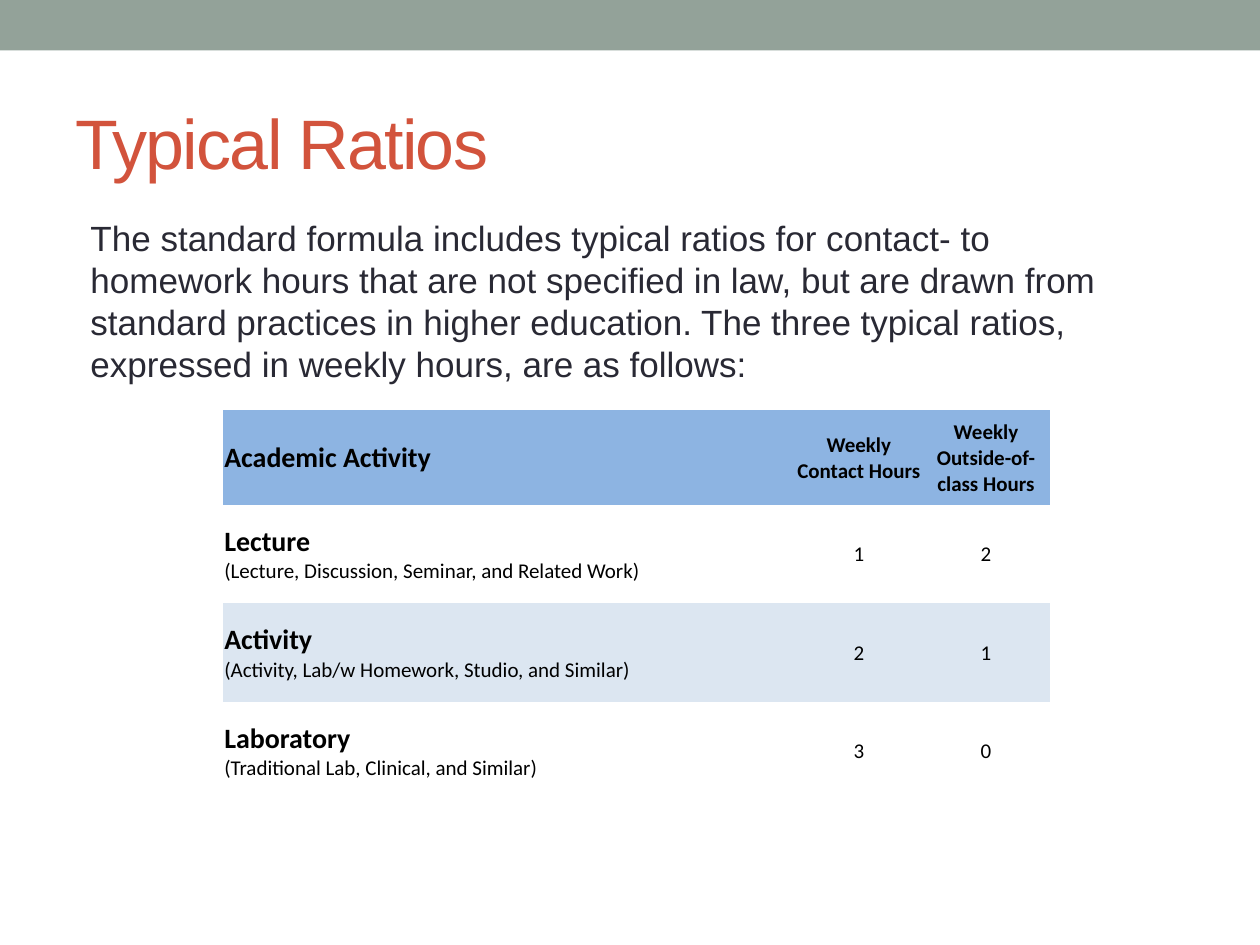
from dataclasses import dataclass

from pptx import Presentation
from pptx.dml.color import RGBColor
from pptx.enum.shapes import MSO_SHAPE
from pptx.enum.text import MSO_ANCHOR, PP_ALIGN
from pptx.util import Pt

RECTANGLE = MSO_SHAPE.RECTANGLE
TOP, MIDDLE = MSO_ANCHOR.TOP, MSO_ANCHOR.MIDDLE
LEFT, CENTER = PP_ALIGN.LEFT, PP_ALIGN.CENTER
NO_STYLE_NO_GRID = "{2D5ABB26-0587-4C30-8999-92F81FD0307C}"
BLANK_LAYOUT = 6


@dataclass(frozen=True)
class Theme:
    band: str = "93A299"
    title: str = "D2533C"
    body: str = "292934"
    table_text: str = "000000"
    header_fill: str = "8DB4E2"
    stripe_fill: str = "DCE6F1"
    text_font: str = "Arial"
    table_font: str = "Calibri"
    title_size: float = 40
    body_size: float = 20
    activity_size: float = 16
    detail_size: float = 12


THEME = Theme()

INTRO = (
    "The standard formula includes typical ratios for contact- to homework hours "
    "that are not specified in law, but are drawn from standard practices in higher "
    "education. The three typical ratios, expressed in weekly hours, are as follows:"
)
HEADINGS = ("Academic Activity", "Weekly Contact Hours", "Weekly Outside-of-class Hours")
RATIOS = (
    ("Lecture", "(Lecture, Discussion, Seminar, and Related Work)", 1, 2),
    ("Activity", "(Activity, Lab/w Homework, Studio, and Similar)", 2, 1),
    ("Laboratory", "(Traditional Lab, Clinical, and Similar)", 3, 0),
)
COLUMN_WIDTHS = (327, 72.7, 72.7)
HEADER_HEIGHT, RATIO_HEIGHT = 54, 56.2


def write(paragraph, text, *, size, font=THEME.table_font, color=THEME.table_text,
          bold=False, align=LEFT, tracking=None, line_spacing=None):
    """Append a formatted run to the paragraph."""
    paragraph.alignment = align
    if line_spacing:
        paragraph.line_spacing = Pt(line_spacing)
    run = paragraph.add_run()
    run.text = text
    run.font.name = font
    run.font.size = Pt(size)
    run.font.bold = bold
    run.font.color.rgb = RGBColor.from_string(color)
    if tracking:
        run.font._element.set("spc", str(int(tracking * 100)))


def add_band(slide, width, height):
    band = slide.shapes.add_shape(RECTANGLE, 0, 0, width, Pt(height))
    band.shadow.inherit = False
    band.fill.solid()
    band.fill.fore_color.rgb = RGBColor.from_string(THEME.band)
    band.line.fill.background()


def add_text(slide, text, left, top, width, height, anchor=TOP, **text_format):
    frame = slide.shapes.add_textbox(Pt(left), Pt(top), Pt(width), Pt(height)).text_frame
    frame.word_wrap = True
    frame.vertical_anchor = anchor
    write(frame.paragraphs[0], text, font=THEME.text_font, **text_format)


def prepare_cell(cell, fill):
    """Set the cell's fill and margins, and return its paragraph."""
    cell.vertical_anchor = MIDDLE
    cell.margin_left = cell.margin_right = cell.margin_top = Pt(0.75)
    cell.margin_bottom = 0
    if fill:
        cell.fill.solid()
        cell.fill.fore_color.rgb = RGBColor.from_string(fill)
    else:
        cell.fill.background()
    return cell.text_frame.paragraphs[0]


def add_ratio_table(slide, left, top):
    height = HEADER_HEIGHT + RATIO_HEIGHT * len(RATIOS)
    table = slide.shapes.add_table(
        len(RATIOS) + 1, len(HEADINGS),
        Pt(left), Pt(top), Pt(sum(COLUMN_WIDTHS)), Pt(height)).table
    table._tbl.tblPr[0].text = NO_STYLE_NO_GRID
    table.first_row = table.horz_banding = False
    for column, width in zip(table.columns, COLUMN_WIDTHS):
        column.width = Pt(width)
    for index, row in enumerate(table.rows):
        row.height = Pt(RATIO_HEIGHT if index else HEADER_HEIGHT)

    # Header row
    for index, heading in enumerate(HEADINGS):
        write(prepare_cell(table.cell(0, index), THEME.header_fill), heading, bold=True,
              size=THEME.detail_size if index else THEME.activity_size,
              align=CENTER if index else LEFT)

    # One row per activity, every second one striped
    for row, (activity, detail, *hours) in enumerate(RATIOS, start=1):
        fill = THEME.stripe_fill if row % 2 == 0 else None
        label = prepare_cell(table.cell(row, 0), fill)
        write(label, activity, size=THEME.activity_size, bold=True)
        label.add_line_break()
        write(label, detail, size=THEME.detail_size)
        for column, value in enumerate(hours, start=1):
            write(prepare_cell(table.cell(row, column), fill), str(value),
                  size=THEME.detail_size, align=CENTER)


def main():
    deck = Presentation()
    deck.slide_width, deck.slide_height = Pt(720), Pt(540)
    slide = deck.slides.add_slide(deck.slide_layouts[BLANK_LAYOUT])

    # Top band, title and introduction
    add_band(slide, deck.slide_width, 28.8)
    add_text(slide, "Typical Ratios", 36, 42, 648, 78, anchor=MIDDLE,
             size=THEME.title_size, color=THEME.title, tracking=-1)
    add_text(slide, INTRO, 44.64, 120.24, 617, 355.7,
             size=THEME.body_size, color=THEME.body, line_spacing=24)

    # Ratios of contact to homework hours
    add_ratio_table(slide, 127.44, 234.5)

    deck.save("out.pptx")


if __name__ == "__main__":
    main()
